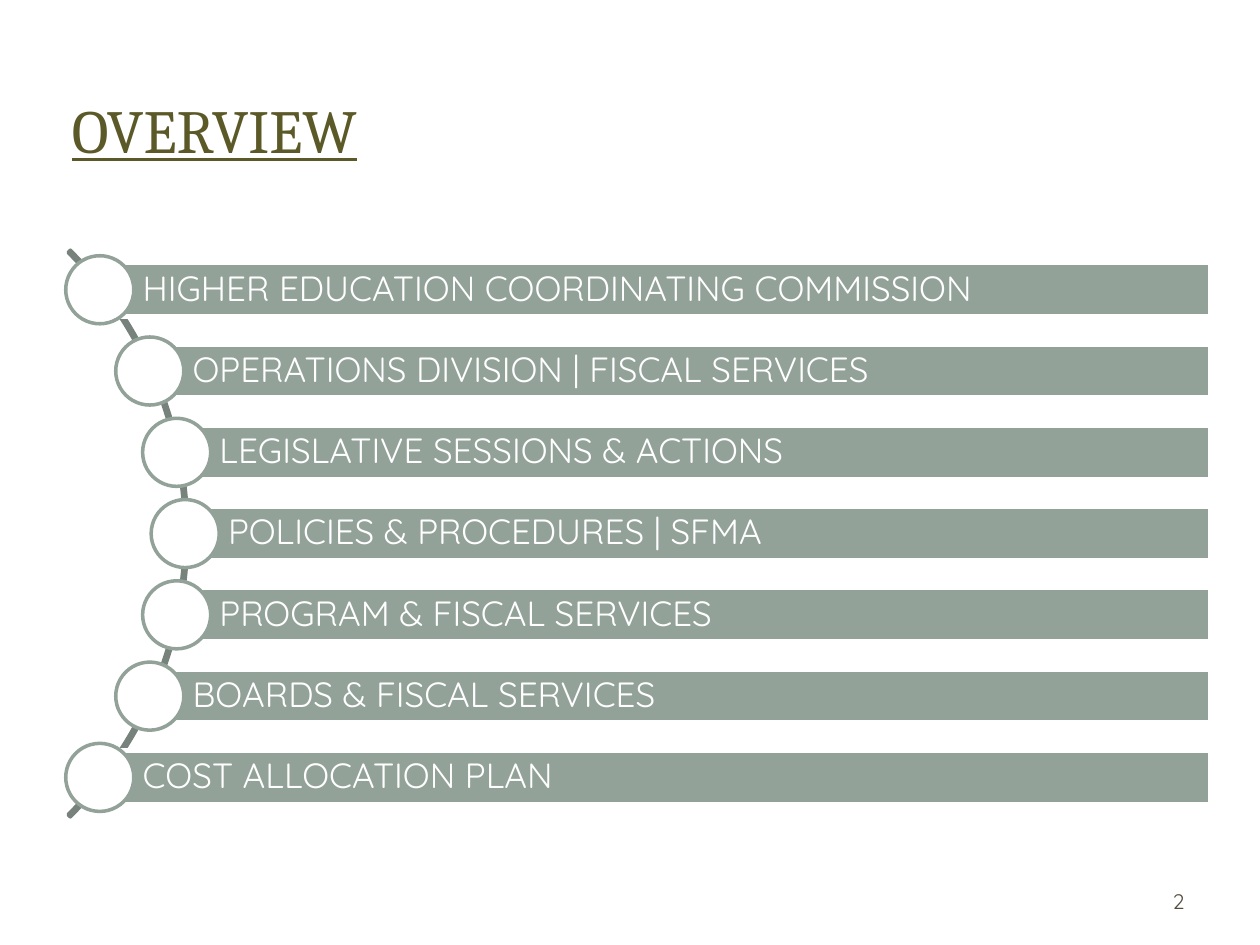
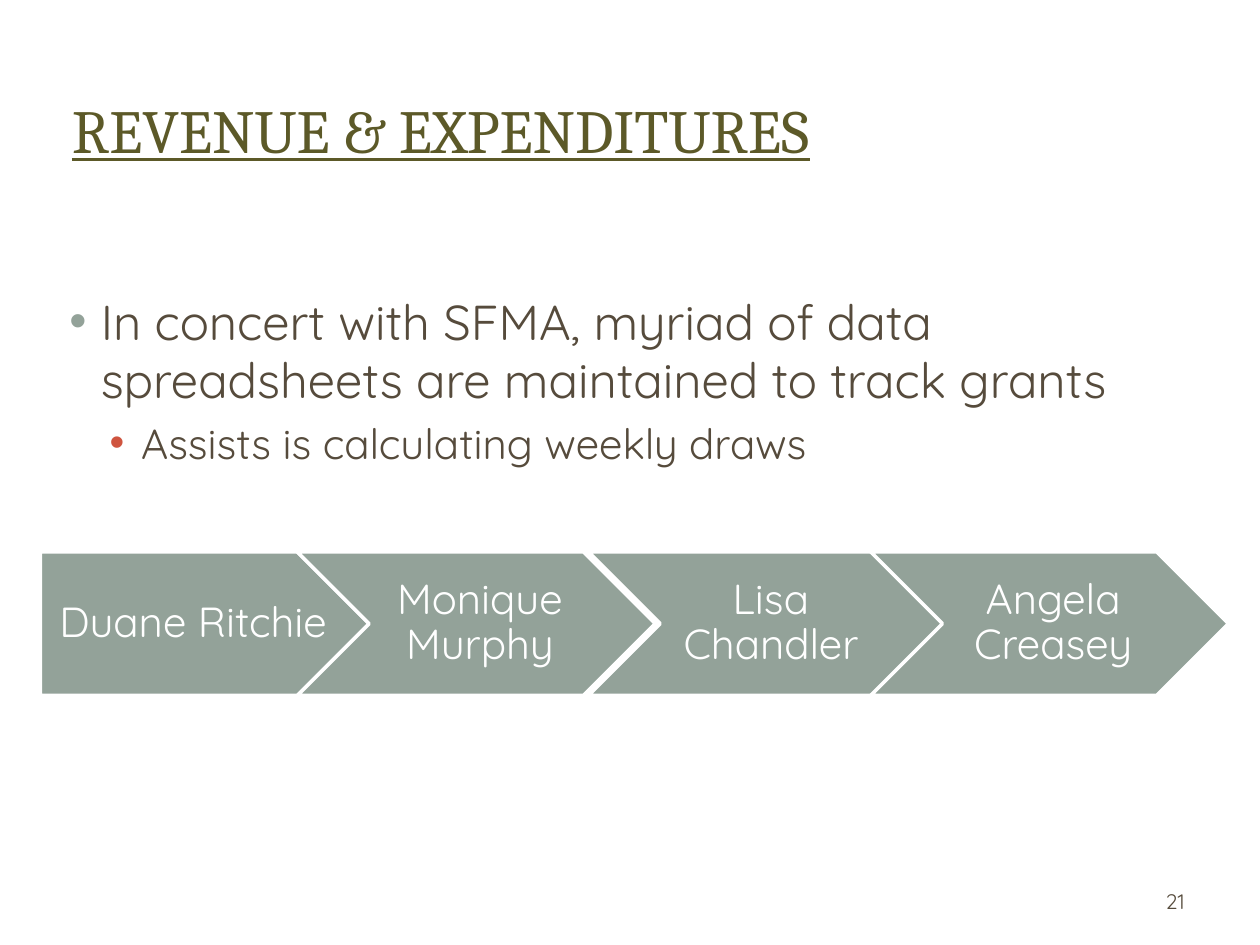
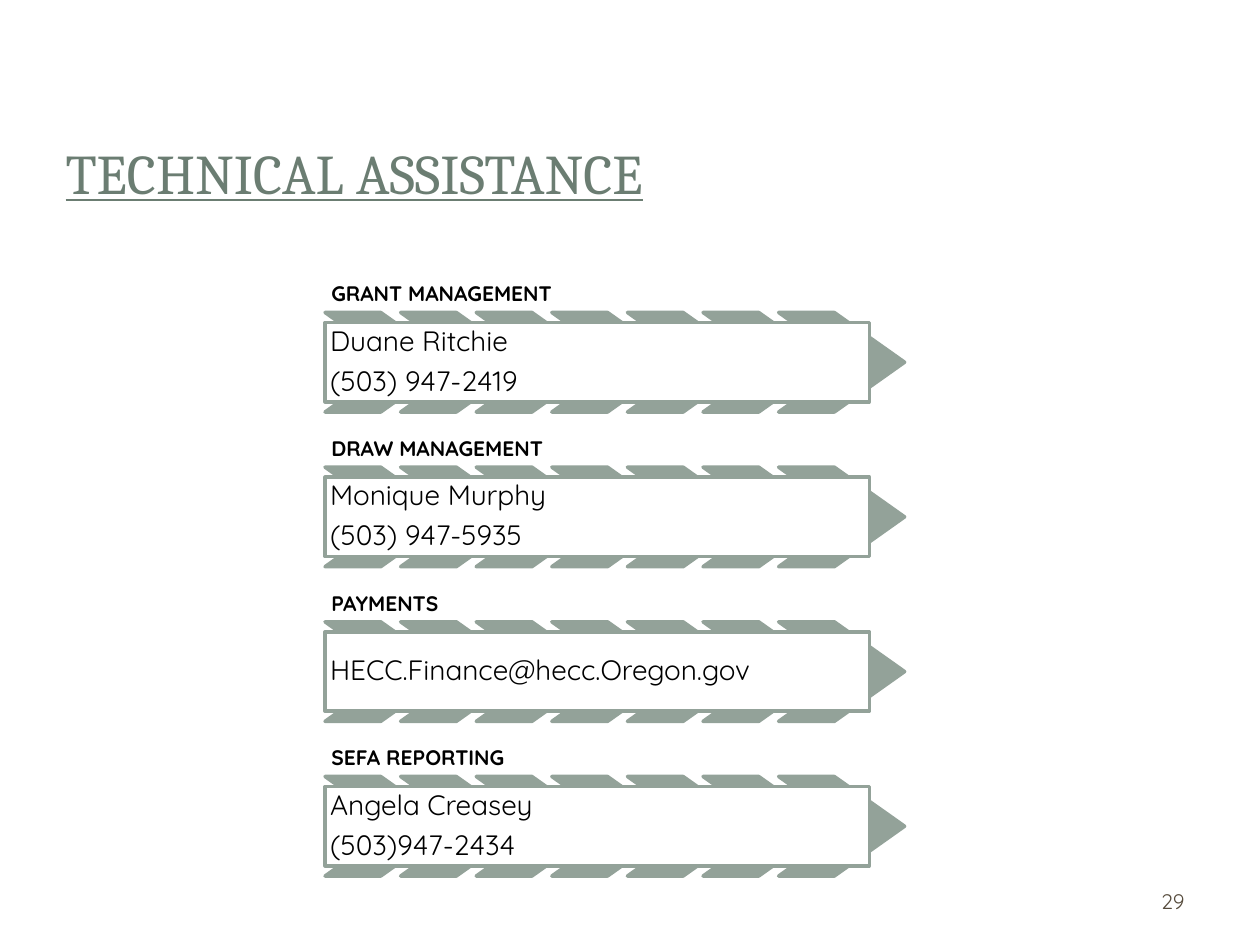
from dataclasses import dataclass
from math import sqrt

from lxml import etree
from pptx import Presentation
from pptx.dml.color import RGBColor
from pptx.enum.shapes import MSO_SHAPE
from pptx.enum.text import MSO_ANCHOR, MSO_AUTO_SIZE, PP_ALIGN
from pptx.oxml.ns import qn
from pptx.util import Inches, Pt

LEFT, CENTER, RIGHT = PP_ALIGN.LEFT, PP_ALIGN.CENTER, PP_ALIGN.RIGHT
MIDDLE, BOTTOM, TOP = MSO_ANCHOR.MIDDLE, MSO_ANCHOR.BOTTOM, MSO_ANCHOR.TOP
NO_FIT = MSO_AUTO_SIZE.NONE
RECTANGLE, OVAL, ARC = MSO_SHAPE.RECTANGLE, MSO_SHAPE.OVAL, MSO_SHAPE.BLOCK_ARC
PENTAGON, CHEVRON = MSO_SHAPE.PENTAGON, MSO_SHAPE.CHEVRON
TITLE_AND_BODY, TITLE_ONLY = 1, 5


@dataclass(frozen=True)
class Theme:
    heading_font: str = "Cambria"
    text_font: str = "Quicksand"
    olive: str = "5C5928"
    pine: str = "6B7D72"
    sage: str = "93A299"
    rail: str = "76827B"
    brown: str = "564B3C"
    coral: str = "CF543F"
    white: str = "FFFFFF"
    black: str = "000000"
    title: float = 35
    closing_title: float = 32
    bullet: float = 28
    sub_bullet: float = 24
    agenda: float = 20
    contact: float = 16
    small: float = 12


@dataclass(frozen=True)
class Box:
    left: float
    top: float
    width: float
    height: float

    def lengths(self):
        return [Inches(v) for v in (self.left, self.top, self.width, self.height)]


THEME = Theme()
TITLE_BOX = Box(0.47, 0.45, 9.03, 1.14)
PAGE_NUMBER_BOX = Box(7.17, 6.95, 2.33, 0.4)


def rgb(color):
    return RGBColor.from_string(color)


def style_runs(paragraph, size, color, font=THEME.text_font, bold=False, underline=False):
    for run in paragraph.runs:
        run.font.name = font
        run.font.size = Pt(size)
        run.font.color.rgb = rgb(color)
        run.font.bold = bold
        run.font.underline = underline


def write(shape, text, size, color, align=LEFT, anchor=MIDDLE,
          insets=(0.1, 0.05, 0.1, 0.05), spacing=0.9, after=0, bold=False):
    frame = shape.text_frame
    frame.word_wrap = True
    frame.vertical_anchor = anchor
    frame.margin_left, frame.margin_top, frame.margin_right, frame.margin_bottom = map(Inches, insets)
    frame.text = text
    for paragraph in frame.paragraphs:
        paragraph.alignment = align
        paragraph.line_spacing = spacing
        paragraph.space_after = Pt(after)
        style_runs(paragraph, size, color, bold=bold)


def add_shape(slide, kind, box, fill, line, line_width):
    shape = slide.shapes.add_shape(kind, *box.lengths())
    shape.shadow.inherit = False
    shape.fill.solid()
    shape.fill.fore_color.rgb = rgb(fill)
    shape.line.color.rgb = rgb(line)
    shape.line.width = Pt(line_width)
    return shape


def place(placeholder, box):
    placeholder.left, placeholder.top, placeholder.width, placeholder.height = box.lengths()
    placeholder.text_frame.auto_size = NO_FIT
    placeholder.text_frame.word_wrap = True


def start_slide(prs, layout, title, number, box=TITLE_BOX, size=THEME.title, color=THEME.olive):
    slide = prs.slides.add_slide(prs.slide_layouts[layout])
    heading = slide.shapes.title
    place(heading, box)
    heading.text_frame.text = title
    heading.text_frame.vertical_anchor = MIDDLE
    paragraph = heading.text_frame.paragraphs[0]
    paragraph.alignment = LEFT
    style_runs(paragraph, size, color, THEME.heading_font, underline=True)
    page_number = slide.shapes.add_textbox(*PAGE_NUMBER_BOX.lengths())
    write(page_number, str(number), THEME.small, THEME.brown, RIGHT, spacing=1)
    return slide


def add_agenda(slide, box, topics):
    bar_height, circle_size, arc_size, curve_radius = 0.43, 0.54, 6.36, 3.1
    middle = box.top + box.height / 2
    furthest = box.left + 0.94
    pitch = (box.height - circle_size) / (len(topics) - 1)
    arc_box = Box(furthest + 0.02 - arc_size, middle - arc_size / 2, arc_size, arc_size)
    arc = add_shape(slide, ARC, arc_box, THEME.rail, THEME.rail, 2)
    for index, value in enumerate((189, 27, 0.004)):
        arc.adjustments[index] = value
    for row, topic in enumerate(topics):
        offset = (row - (len(topics) - 1) / 2) * pitch
        x = furthest - curve_radius + sqrt(curve_radius ** 2 - offset ** 2)
        y = middle + offset
        bar_box = Box(x, y - bar_height / 2, box.left + box.width - x, bar_height)
        bar = add_shape(slide, RECTANGLE, bar_box, THEME.sage, THEME.white, 3)
        write(bar, topic, THEME.agenda, THEME.white, insets=(0.34, 0.06, 0.06, 0.06))
        circle_box = Box(x - circle_size / 2, y - circle_size / 2, circle_size, circle_size)
        add_shape(slide, OVAL, circle_box, THEME.white, THEME.sage, 2)


def add_bullets(slide, box, points):
    levels = ((THEME.bullet, THEME.sage, 0.38), (THEME.sub_bullet, THEME.coral, 0.7))
    body = slide.placeholders[1]
    place(body, box)
    frame = body.text_frame
    frame.vertical_anchor = TOP
    frame.text = "\n".join(text for _, text in points)
    for paragraph, (level, _) in zip(frame.paragraphs, points):
        size, bullet_color, indent = levels[level]
        paragraph.level = level
        style_runs(paragraph, size, THEME.brown)
        properties = paragraph._p.get_or_add_pPr()
        properties.set("marL", str(Inches(indent)))
        properties.set("indent", str(Inches(-0.25)))
        color = etree.SubElement(properties, qn("a:buClr"))
        etree.SubElement(color, qn("a:srgbClr"), val=bullet_color)
        etree.SubElement(properties, qn("a:buChar"), char="•")


def add_staff_chain(slide, box, names):
    steps = ((0, 2.61), (2.04, 2.84), (4.35, 2.84), (6.59, 2.84))
    for index, (name, (offset, width)) in enumerate(zip(names, steps)):
        kind, left_inset = (CHEVRON, 0.1) if index else (PENTAGON, 0.14)
        step_box = Box(box.left + offset, box.top, width, box.height)
        step = add_shape(slide, kind, step_box, THEME.sage, THEME.white, 2)
        write(step, name, THEME.sub_bullet, THEME.white, CENTER,
              insets=(left_inset, 0.07, 0.04, 0.07))


def add_contact(slide, box, duty, details):
    label_height, chevron_count, chevron_pitch = 0.39, 7, 0.6
    label = slide.shapes.add_textbox(*Box(box.left, box.top, 4.26, label_height).lengths())
    write(label, duty, THEME.small, THEME.black, anchor=BOTTOM, insets=(0.05,) * 4, bold=True)
    for index in range(chevron_count):
        chevron_box = Box(box.left + index * chevron_pitch, box.top + label_height, 1, 0.79)
        chevron = add_shape(slide, CHEVRON, chevron_box, THEME.sage, THEME.sage, 2)
        chevron.adjustments[0] = 0.706
    card_box = Box(box.left, box.top + label_height + 0.08, 4.32, 0.63)
    card = add_shape(slide, RECTANGLE, card_box, THEME.white, THEME.sage, 2)
    write(card, details, THEME.contact, THEME.black, insets=(0.04,) * 4, after=5.6)


def add_contacts(slide, box, contacts):
    pitch = box.height / len(contacts)
    for row, (duty, details) in enumerate(contacts):
        add_contact(slide, Box(box.left, box.top + row * pitch, box.width, pitch), duty, details)


def build_overview(prs):
    slide = start_slide(prs, TITLE_ONLY, "OVERVIEW", 2)
    add_agenda(slide, Box(0.53, 2.03, 9.08, 4.41), (
        "HIGHER EDUCATION COORDINATING COMMISSION",
        "OPERATIONS DIVISION | FISCAL SERVICES",
        "LEGISLATIVE SESSIONS & ACTIONS",
        "POLICIES & PROCEDURES | SFMA",
        "PROGRAM & FISCAL SERVICES",
        "BOARDS & FISCAL SERVICES",
        "COST ALLOCATION PLAN",
    ))


def build_revenue(prs):
    slide = start_slide(prs, TITLE_AND_BODY, "REVENUE & EXPENDITURES", 21)
    add_bullets(slide, Box(0.32, 2.26, 9.43, 5.03), (
        (0, "In concert with SFMA, myriad of data spreadsheets are maintained to track grants"),
        (1, "Assists is calculating weekly draws"),
    ))
    add_staff_chain(slide, Box(0.32, 4.38, 9.43, 1.14),
                    ("Duane Ritchie", "Monique Murphy", "Lisa Chandler", "Angela Creasey"))


def build_assistance(prs):
    slide = start_slide(prs, TITLE_ONLY, "TECHNICAL ASSISTANCE", 29,
                        Box(0.42, 0.95, 8.17, 0.83), THEME.closing_title, THEME.pine)
    add_contacts(slide, Box(2.58, 2.09, 4.6, 4.91), (
        ("GRANT MANAGEMENT", "Duane Ritchie\n(503) 947-2419"),
        ("DRAW MANAGEMENT", "Monique Murphy\n(503) 947-5935"),
        ("PAYMENTS", "HECC.Finance@hecc.Oregon.gov"),
        ("SEFA REPORTING", "Angela Creasey\n(503)947-2434"),
    ))


def main():
    prs = Presentation()
    prs.slide_width, prs.slide_height = Inches(10), Inches(7.5)
    build_overview(prs)
    build_revenue(prs)
    build_assistance(prs)
    prs.save("out.pptx")


if __name__ == "__main__":
    main()
